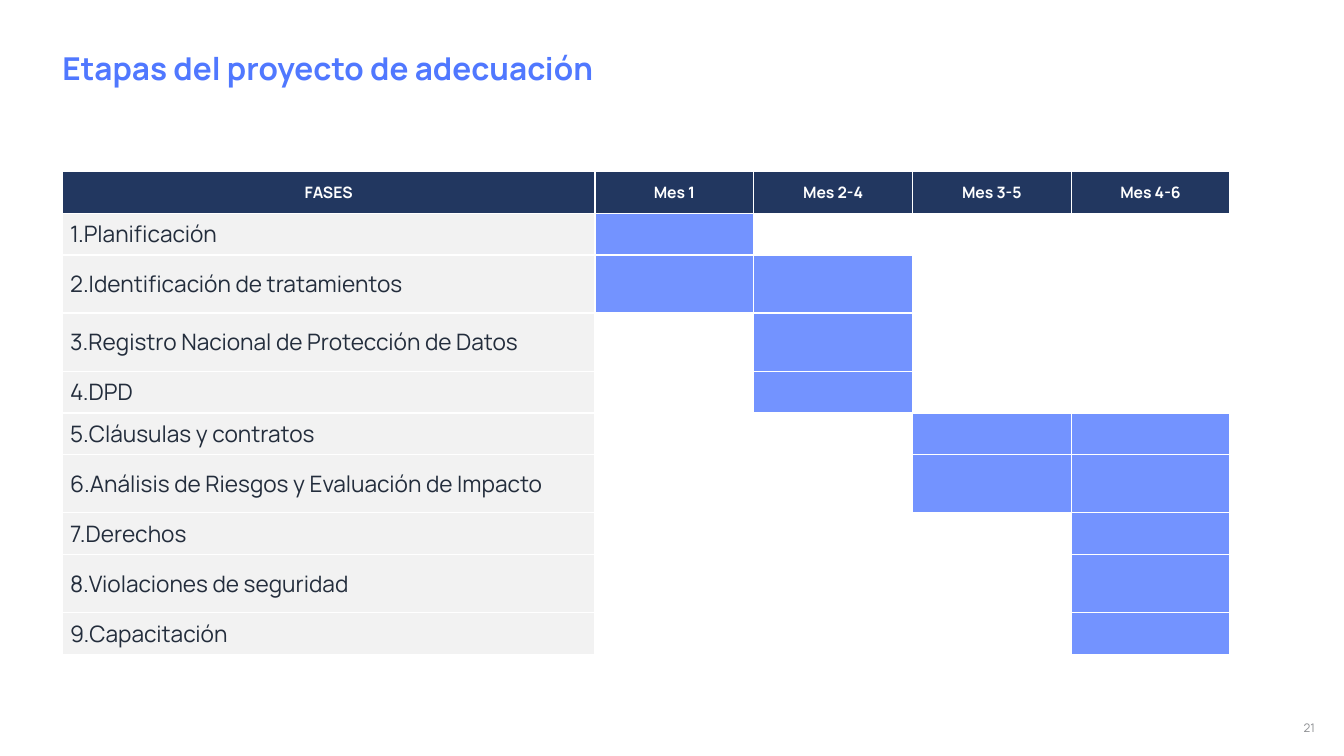
from lxml import etree
from pptx import Presentation
from pptx import util as u
from pptx.dml.color import RGBColor
from pptx.enum import text
from pptx.oxml.ns import qn

FONT = "Manrope"
COLORS = {"blue": "5078FF", "navy": "223760", "ink": "232D3C",
          "gray": "8D8F92", "light": "F2F2F2", "white": "FFFFFF"}
MONTHS = ["Mes 1", "Mes 2-4", "Mes 3-5", "Mes 4-6"]
# Phase name, active month columns
PHASES = [
    ("1.Planificación", [1]),
    ("2.Identificación de tratamientos", [1, 2]),
    ("3.Registro Nacional de Protección de Datos", [2]),
    ("4.DPD", [2]),
    ("5.Cláusulas y contratos", [3, 4]),
    ("6.Análisis de Riesgos y Evaluación de Impacto", [3, 4]),
    ("7.Derechos", [4]),
    ("8.Violaciones de seguridad", [4]),
    ("9.Capacitación", [4]),
]
LOW_ROW, TALL_ROW = 0.59, 0.82
TALL_ROWS = {2, 3, 6, 8}


def color(name):
    return RGBColor.from_string(COLORS[name])


def write(text_frame, words, size, color_name, bold=False, align=text.PP_ALIGN.LEFT):
    text_frame.text = words
    paragraph = text_frame.paragraphs[0]
    paragraph.alignment = align
    font = paragraph.runs[0].font
    font.name, font.size, font.bold = FONT, u.Pt(size), bold
    font.color.rgb = color(color_name)


def place(shape, box):
    shape.left, shape.top, shape.width, shape.height = map(u.Inches, box)
    frame = shape.text_frame
    frame.margin_left = frame.margin_right = frame.margin_top = frame.margin_bottom = 0
    frame.vertical_anchor = text.MSO_ANCHOR.TOP
    frame.word_wrap = True
    return frame


def add_title(slide, box):
    write(place(slide.shapes.title, box), "Etapas del proyecto de adecuación", 32, "blue", True)


def add_page_number(slide, box):
    frame = place(slide.shapes.add_textbox(0, 0, 0, 0), box)
    write(frame, "21", 12, "gray", align=text.PP_ALIGN.RIGHT)


def style_cell(cell, fill=None, alpha=None):
    cell.vertical_anchor = text.MSO_ANCHOR.MIDDLE
    cell.margin_left = cell.margin_right = u.Inches(0.11)
    cell.margin_top = cell.margin_bottom = 0
    # White borders come before the fill
    properties = cell._tc.get_or_add_tcPr()
    for side in ("a:lnL", "a:lnR", "a:lnT", "a:lnB"):
        line = etree.SubElement(properties, qn(side), w=str(u.Pt(1.5)))
        solid = etree.SubElement(line, qn("a:solidFill"))
        etree.SubElement(solid, qn("a:srgbClr"), val=COLORS["white"])
    if fill is None:
        cell.fill.background()
        return
    cell.fill.solid()
    cell.fill.fore_color.rgb = color(fill)
    if alpha:
        tone = properties.find(qn("a:solidFill")).find(qn("a:srgbClr"))
        etree.SubElement(tone, qn("a:alpha"), val=str(alpha * 1000))


def add_schedule(slide, box):
    row_count, column_count = len(PHASES) + 1, len(MONTHS) + 1
    frame = slide.shapes.add_table(row_count, column_count, *map(u.Inches, box))
    table = frame.table
    table.first_row = table.horz_banding = False
    month_width = 2.24
    for index, column in enumerate(table.columns):
        column.width = u.Inches(month_width if index else box[2] - month_width * len(MONTHS))
    for index, row in enumerate(table.rows):
        row.height = u.Inches(TALL_ROW if index in TALL_ROWS else LOW_ROW)

    # Header row
    for index, heading in enumerate(["FASES"] + MONTHS):
        cell = table.cell(0, index)
        style_cell(cell, "navy")
        write(cell.text_frame, heading, 16, "white", True, text.PP_ALIGN.CENTER)

    # Phase names and their active months
    for row, (phase, active) in enumerate(PHASES, 1):
        style_cell(table.cell(row, 0), "light")
        write(table.cell(row, 0).text_frame, phase, 23, "ink")
        for month in range(1, column_count):
            if month in active:
                style_cell(table.cell(row, month), "blue", 80)
            else:
                style_cell(table.cell(row, month))


def main():
    presentation = Presentation()
    presentation.slide_width = u.Inches(18.97)
    presentation.slide_height = u.Inches(10.67)
    slide = presentation.slides.add_slide(presentation.slide_layouts[5])
    add_title(slide, (0.88, 0.69, 9.94, 0.54))
    add_schedule(slide, (0.88, 2.42, 16.48, 6.82))
    add_page_number(slide, (17.83, 10.17, 0.73, 0.17))
    presentation.save("out.pptx")


if __name__ == "__main__":
    main()
